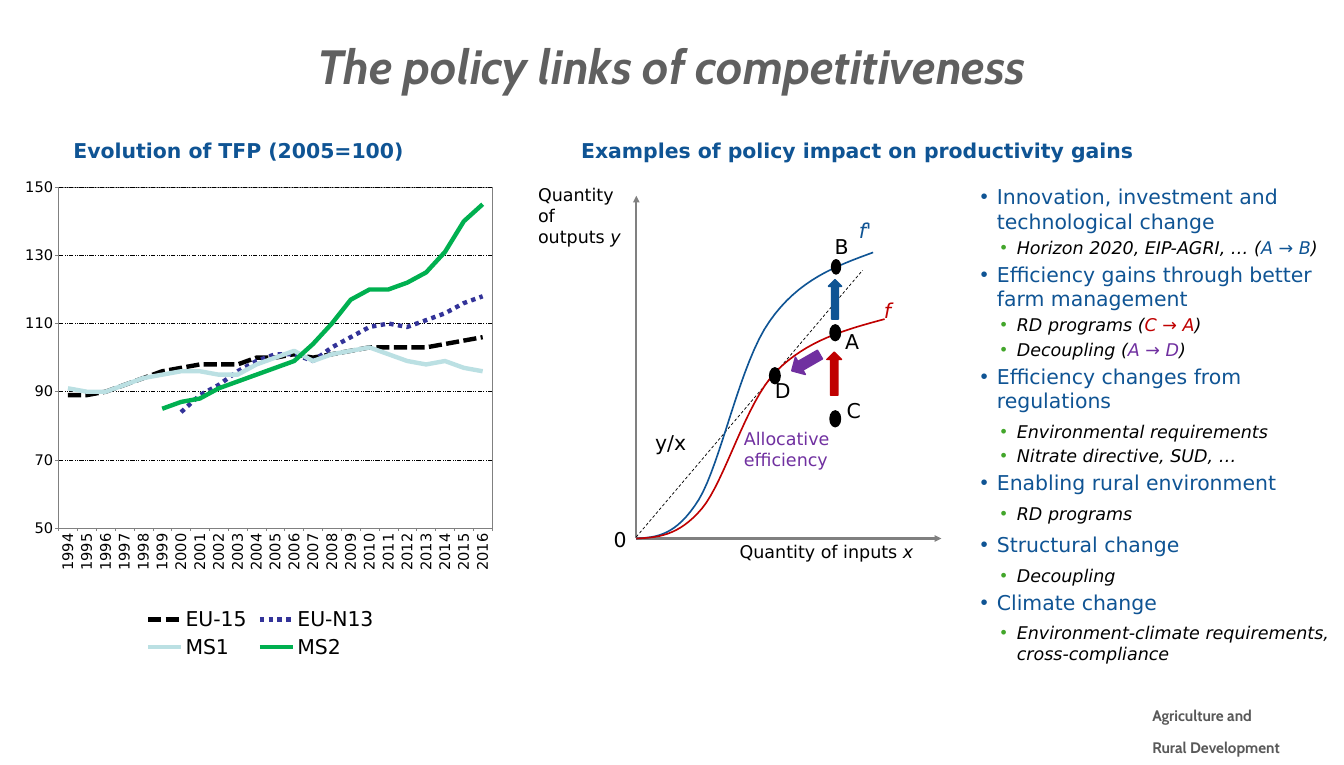
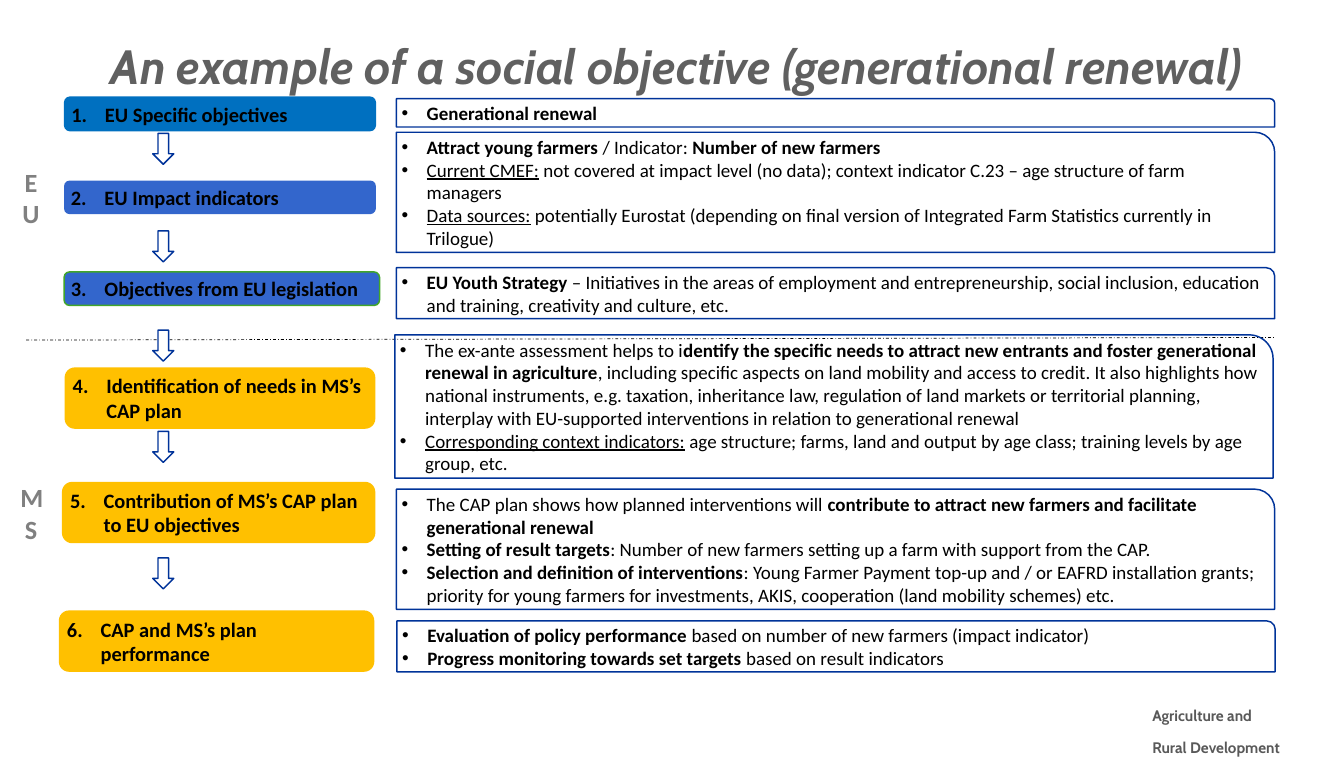
"""Builds two slides on policy links of competitiveness and generational renewal."""
from lxml.etree import SubElement
from pptx import Presentation
from pptx.chart.data import CategoryChartData
from pptx.dml.color import RGBColor
from pptx.enum.chart import XL_CHART_TYPE, XL_LEGEND_POSITION, XL_TICK_MARK
from pptx.enum.dml import MSO_LINE
from pptx.enum.shapes import MSO_CONNECTOR, MSO_SHAPE
from pptx.enum.text import MSO_ANCHOR, MSO_AUTO_SIZE, PP_ALIGN
from pptx.oxml import parse_xml
from pptx.oxml.ns import nsdecls, qn
from pptx.util import Inches, Pt

BLACK = RGBColor(0x00, 0x00, 0x00)
WHITE = RGBColor(0xFF, 0xFF, 0xFF)
GRAY = RGBColor(0x80, 0x80, 0x80)
SLATE = RGBColor(0x60, 0x60, 0x60)
STONE = RGBColor(0x59, 0x59, 0x59)
BLUE = RGBColor(0x0F, 0x54, 0x94)
NAVY = RGBColor(0x00, 0x33, 0x99)
SKY = RGBColor(0x00, 0x70, 0xC0)
ROYAL = RGBColor(0x33, 0x66, 0xCC)
INDIGO = RGBColor(0x33, 0x33, 0x99)
PALE = RGBColor(0xBB, 0xE0, 0xE3)
GREEN = RGBColor(0x00, 0xB0, 0x50)
LEAF = RGBColor(0x42, 0xA6, 0x2A)
RED = RGBColor(0xC0, 0x00, 0x00)
PURPLE = RGBColor(0x70, 0x30, 0xA0)
GOLD = RGBColor(0xFF, 0xC0, 0x00)
SANS, BODY, HEAD = "DejaVu Sans", "Calibri", "Cabin"

deck = Presentation()
deck.slide_width, deck.slide_height = Inches(25.59), Inches(14.57)
CELL = deck.slide_width / 256


def box(slide, kind, x, y, w, h, fill=None, edge=None):
    spot = [int(CELL * n) for n in (x, y, w, h)]
    if kind is None:
        shape = slide.shapes.add_textbox(*spot)
    else:
        shape = slide.shapes.add_shape(kind, *spot)
        shape.shadow.inherit = False
        for part, tone in ((shape.fill, fill), (shape.line.fill, edge)):
            if tone is None:
                part.background()
            else:
                part.solid()
                part.fore_color.rgb = tone
        if edge is not None:
            shape.line.width = Pt(2)
    shape.text_frame.word_wrap = True
    return shape


def write(par, parts, size, color, name=SANS, mark="", left=0, hang=0, tint=None):
    par.alignment = PP_ALIGN.LEFT
    if mark:
        props = par._p.get_or_add_pPr()
        props.set("marL", str(int(CELL * left)))
        props.set("indent", str(-int(CELL * hang)))
        tone = SubElement(SubElement(props, qn("a:buClr")), qn("a:srgbClr"))
        tone.set("val", str(tint or color))
        if mark.isdigit():
            bullet = SubElement(props, qn("a:buAutoNum"))
            bullet.set("type", "arabicPeriod")
            bullet.set("startAt", mark)
        else:
            SubElement(props, qn("a:buFont")).set("typeface", "Arial")
            SubElement(props, qn("a:buChar")).set("char", mark)
    font = par.font
    font.size, font.name, font.color.rgb = Pt(size), name, color
    for part in [parts] if isinstance(parts, str) else parts:
        text, look = (part, None) if isinstance(part, str) else part
        run = par.add_run()
        run.text = text
        if look == "b":
            run.font.bold = True
        elif look == "u":
            run.font.underline = True
        elif look == "i":
            run.font.italic = True
        elif look:
            run.font.color.rgb = look


slides = []
for text in ("The policy links of competitiveness ",
             "An example of a social objective (generational renewal)"):
    slide = deck.slides.add_slide(deck.slide_layouts[5])
    slides.append(slide)
    title = slide.shapes.title
    title.left, title.top, title.width, title.height = [
        int(CELL * n) for n in (6.4, 6.5, 245, 13.3)]
    frame = title.text_frame
    frame.auto_size, frame.word_wrap = MSO_AUTO_SIZE.NONE, True
    frame.vertical_anchor = MSO_ANCHOR.MIDDLE
    frame.margin_left = frame.margin_right = int(CELL * 2.6)
    frame.margin_top = frame.margin_bottom = int(CELL * 1.3)
    par = frame.paragraphs[0]
    write(par, text, 66, SLATE, HEAD)
    par.alignment, par.line_spacing = PP_ALIGN.CENTER, 0.9
    par.font.bold = par.font.italic = True

    frame = box(slide, None, 218.5, 133.5, 31.5, 9.1).text_frame
    for par, text in ((frame.paragraphs[0], "Agriculture and"),
                      (frame.add_paragraph(), "Rural Development")):
        write(par, text, 36, STONE, HEAD)
        par.font.bold = True
        par.runs[0]._r.get_or_add_rPr().set("baseline", "30000")
links, renew = slides

for slide, x1, y1, x2, y2, tone, width, dash in (
        (links, 121.2, 102.6, 121.2, 37.3, GRAY, 3, None),
        (links, 121.2, 102.6, 179.3, 102.6, GRAY, 3, None),
        (links, 121.2, 102.3, 164.3, 51.5, BLACK, 1, MSO_LINE.DASH),
        (renew, 5, 64.8, 242.8, 64.3, BLACK, 1, MSO_LINE.DASH_DOT)):
    wire = slide.shapes.add_connector(
        MSO_CONNECTOR.STRAIGHT, *[int(CELL * n) for n in (x1, y1, x2, y2)])
    wire.line.color.rgb, wire.line.width = tone, Pt(width)
    if dash:
        wire.line.dash_style = dash
    else:
        SubElement(wire.line._get_or_add_ln(), qn("a:tailEnd")).set("type", "triangle")
    SubElement(wire._element.spPr, qn("a:effectLst"))

for x, w, text in ((13, 85.4, "Evolution of TFP (2005=100)"),
                   (109.7, 134, "Examples of policy impact on productivity gains")):
    write(box(links, None, x, 25.9, w, 5.7).text_frame.paragraphs[0], [(text, "b")], 28, BLUE)

rows = (
    ("EU-15", BLACK, MSO_LINE.SQUARE_DOT, 0,
     (89, 89, 90, 92, 94, 96, 97, 98, 98, 98, 100, 100, 101, 100, 101, 102,
      103, 103, 103, 103, 104, 105, 106)),
    ("EU-N13", INDIGO, MSO_LINE.ROUND_DOT, 6,
     (84, 89, 92, 96, 99, 101, 101, 99, 103, 106, 109, 110, 109, 111, 113, 116, 118)),
    ("MS1", PALE, MSO_LINE.SOLID, 0,
     (91, 90, 90, 92, 94, 95, 96, 96, 95, 95, 98, 100, 102, 99, 101, 102, 103,
      101, 99, 98, 99, 97, 96)),
    ("MS2", GREEN, MSO_LINE.SOLID, 5,
     (85, 87, 88, 91, 93, 95, 97, 99, 104, 110, 117, 120, 120, 122, 125, 131, 140, 145)))
data = CategoryChartData()
data.categories = [str(year) for year in range(1994, 2017)]
for name, tone, dash, skip, vals in rows:
    data.add_series(name, [None] * skip + list(vals))
chart = links.shapes.add_chart(
    XL_CHART_TYPE.LINE, *[int(CELL * n) for n in (2.8, 30.9, 92.8, 95.5)], data).chart
chart.has_title = False
chart.font.size, chart.font.name, chart.font.color.rgb = Pt(20), SANS, BLACK
chart.plots[0].vary_by_categories = False
for line, (name, tone, dash, skip, vals) in zip(chart.plots[0].series, rows):
    line.smooth = False
    pen = line.format.line
    pen.color.rgb, pen.width, pen.dash_style = tone, Pt(6), dash
years, scale = chart.category_axis, chart.value_axis
for axis in (years, scale):
    axis.major_tick_mark = XL_TICK_MARK.OUTSIDE
    axis.format.line.color.rgb = GRAY
    axis.tick_labels.font.size = Pt(20)
years._element.txPr.bodyPr.set("rot", "-5400000")
scale.minimum_scale, scale.maximum_scale, scale.major_unit = 50, 150, 20
scale.tick_labels.number_format = "0"
scale.tick_labels.number_format_is_linked = False
grid = scale.major_gridlines.format.line
grid.color.rgb, grid.width, grid.dash_style = BLACK, Pt(0.75), MSO_LINE.DASH_DOT_DOT
chart.has_legend = True
legend = chart.legend
legend.position, legend.include_in_layout = XL_LEGEND_POSITION.BOTTOM, False
legend.font.size, legend.font.name, legend.font.color.rgb = Pt(28), SANS, BLACK
area = chart._chartSpace.chart.plotArea
for host, place, inner, share in (
        (area, 0, '<c:layoutTarget val="inner"/>', (0.09, 0.05, 0.89, 0.68)),
        (legend._element, 1, "", (0.26, 0.88, 0.49, 0.12))):
    for old in host.findall(qn("c:layout")):
        host.remove(old)
    sides = "".join(f'<c:{tag}Mode val="edge"/>' for tag in "xy")
    sides += "".join(f'<c:{tag} val="{n}"/>' for tag, n in zip("xywh", share))
    host.insert(place, parse_xml(
        f'<c:layout {nsdecls("c")}><c:manualLayout>{inner}{sides}</c:manualLayout></c:layout>'))
area.append(parse_xml(
    f'<c:spPr {nsdecls("c", "a")}><a:noFill/><a:ln w="12700"><a:solidFill>'
    f'<a:srgbClr val="{GRAY}"/></a:solidFill></a:ln></c:spPr>'))

for tone, knots in (
        (BLUE, ((121.2, 102.6), (125, 102.4), (128.8, 102.1), (133.1, 95.2), (137.3, 88.3),
                (141, 69), (146.6, 61.2), (152.1, 53.3), (159.2, 50.7), (166.3, 48.1))),
        (RED, ((121.2, 102.6), (125.2, 102.4), (129.2, 102.2), (133.7, 96.9), (138.1, 91.6),
               (142, 76.8), (147.8, 70.8), (153.7, 64.8), (161.1, 62.8), (168.5, 60.8)))):
    dots = []
    for k in range(0, 9, 3):
        for t in [n / 16 for n in range(1, 17)]:
            mix = ((1 - t) ** 3, 3 * t * (1 - t) ** 2, 3 * t * t * (1 - t), t ** 3)
            dots.append([int(CELL * sum(m * p[d] for m, p in zip(mix, knots[k:k + 4])))
                         for d in (0, 1)])
    path = links.shapes.build_freeform(*[int(CELL * n) for n in knots[0]])
    path.add_line_segments(dots, close=False)
    curve = path.convert_to_shape()
    curve.shadow.inherit = False
    curve.fill.background()
    curve.line.color.rgb, curve.line.width = tone, Pt(2.25)

for x, y, w, h in ((146.6, 70.1, 2, 3), (158.1, 78.3, 2, 3),
                   (158.1, 61.9, 2, 3), (158.4, 49.5, 1.7, 2.7)):
    box(links, MSO_SHAPE.OVAL, x, y, w, h, BLACK, BLACK)
for x, y, w, h, tone, turn in ((157.8, 53.3, 2.5, 7.5, BLUE, 0),
                               (157.5, 67.1, 2.8, 8.2, RED, 0),
                               (151.6, 66, 3.8, 6.2, PURPLE, 240)):
    box(links, MSO_SHAPE.UP_ARROW, x, y, w, h, tone, tone).rotation = turn
for x, y, w, size, tone, parts in (
        (160.3, 75.4, 7.6, 28, BLACK, "C"), (160, 62.3, 7.6, 28, BLACK, "A"),
        (146.6, 71.6, 7.6, 28, BLACK, "D"), (158, 44.1, 6.4, 28, BLACK, "B"),
        (123.8, 81.5, 12.4, 28, BLACK, "y/x"), (115.9, 100, 7.6, 28, BLACK, "0"),
        (167.4, 56.3, 7.6, 28, RED, [("f", "i")]),
        (162.6, 41, 9.6, 28, BLUE, [("f'", "i")]),
        (101.5, 34.6, 18.1, 24, BLACK, ["Quantity of outputs ", ("y", "i")]),
        (139.9, 102.6, 45.9, 24, BLACK, ["Quantity of inputs ", ("x", "i")]),
        (140.7, 81.1, 24.8, 24, PURPLE, "Allocative efficiency")):
    write(box(links, None, x, y, w, 10.8).text_frame.paragraphs[0], parts, size, tone)

frame = box(links, None, 185.8, 34.6, 72.1, 100.8).text_frame
for n, (level, after, parts) in enumerate((
        (0, 0, "Innovation, investment and technological change"),
        (1, 0, ["Horizon 2020, EIP-AGRI, … (", ("A → B", BLUE), ")"]),
        (0, 0, "Efficiency gains through better farm management"),
        (1, 0, ["RD programs (", ("C → A", RED), ")"]),
        (1, 0, ["Decoupling (", ("A → D", PURPLE), ")"]),
        (0, 6, "Efficiency changes from regulations"),
        (1, 0, "Environmental requirements"),
        (1, 0, "Nitrate directive, SUD, …"),
        (0, 6, "Enabling rural environment"),
        (1, 6, "RD programs"),
        (0, 6, "Structural change"),
        (1, 0, "Decoupling"),
        (0, 6, "Climate change"),
        (1, 0, "Environment-climate requirements, cross-compliance"))):
    par = frame.add_paragraph() if n else frame.paragraphs[0]
    size, tone, tint, left = ((28, BLUE, BLUE, 3.1), (24, BLACK, LEAF, 6.9))[level]
    write(par, parts, size, tone, SANS, "•", left, 3.1, tint)
    par.level, par.font.italic = level, bool(level)
    par.space_before, par.space_after = Pt(size * 0.2 if n else 0), Pt(after)

for y in (25.4, 44, 62.9, 82.2, 106.3):
    box(renew, MSO_SHAPE.DOWN_ARROW, 29.1, y, 4, 5.9, WHITE, NAVY)
for n, (x, y, w, h, fill, edge, text) in enumerate((
        (12.3, 18.5, 59.2, 6.4, SKY, SKY, "EU Specific objectives"),
        (12.2, 34.4, 59.4, 6.4, ROYAL, None, "EU Impact indicators"),
        (12.2, 51.8, 60.1, 6.4, ROYAL, LEAF, "Objectives from EU legislation"),
        (12.3, 70, 59.2, 11.7, GOLD, None, "Identification of needs in MS’s CAP plan"),
        (11.8, 91.8, 59.7, 11.7, GOLD, None, "Contribution of MS’s CAP plan to EU objectives"),
        (11.2, 116.3, 60.1, 11.7, GOLD, None, "CAP and MS’s plan performance")), 1):
    step = box(renew, MSO_SHAPE.ROUNDED_RECTANGLE, x, y, w, h, fill, edge)
    write(step.text_frame.paragraphs[0], [(text, "b")], 28, BLACK, BODY, str(n), 6.4, 6.4)

for x, y, h, points in (
        (75.5, 18.8, 5.4, [[("Generational renewal", "b")]]),
        (75.5, 25.2, 22.9, [
            [("Attract young farmers ", "b"), "/ Indicator: ", ("Number of new farmers", "b")],
            [("Current CMEF:", "u"), " not covered at impact level (no data); context indicator "
             "C.23 – age structure of farm managers"],
            [("Data sources:", "u"), " potentially Eurostat (depending on final version of "
             "Integrated Farm Statistics currently in Trilogue)"]]),
        (75.5, 51, 9.7, [
            [("EU Youth Strategy ", "b"), "– Initiatives in the areas of employment and "
             "entrepreneurship, social inclusion, education and training, creativity and "
             "culture, etc."]]),
        (75.2, 63.8, 27.3, [
            ["The ex-ante assessment helps to i", ("dentify the specific needs to attract new "
             "entrants and foster generational renewal in agriculture", "b"),
             ", including specific aspects on land mobility and access to credit. It also "
             "highlights how national instruments, e.g. taxation, inheritance law, regulation of "
             "land markets or territorial planning, interplay with EU-supported interventions in "
             "relation to generational renewal"],
            [("Corresponding context indicators:", "u"), " age structure; farms, land and output "
             "by age class; training levels by age group, etc."]]),
        (75.5, 93.2, 22.9, [
            ["The CAP plan shows how planned interventions will ",
             ("contribute to attract new farmers and facilitate generational renewal", "b")],
            [("Setting of result targets", "b"),
             ": Number of new farmers setting up a farm with support from the CAP."],
            [("Selection and definition of interventions", "b"), ": Young Farmer Payment top-up "
             "and / or EAFRD installation grants; priority for young farmers for investments, "
             "AKIS, cooperation (land mobility schemes) etc."]]),
        (75.6, 118.3, 9.7, [
            [("Evaluation of policy performance ", "b"),
             "based on number of new farmers (impact indicator)"],
            [("Progress monitoring towards set targets ", "b"), "based on result indicators"]])):
    frame = box(renew, MSO_SHAPE.ROUND_1_RECTANGLE, x, y, 167.3, h, None, NAVY).text_frame
    for n, parts in enumerate(points):
        par = frame.add_paragraph() if n else frame.paragraphs[0]
        write(par, parts, 26, BLACK, BODY, "•", 4.8, 4.8)

for y, text in ((30.3, "EU"), (90.4, "MS")):
    frame = box(renew, None, 1.3, y, 9.2, 14.8).text_frame
    frame.margin_left = frame.margin_right = int(CELL * 2.6)
    frame.margin_top = int(CELL * 1.3)
    write(frame.paragraphs[0], [(text, "b")], 36, GRAY, BODY)
    frame.paragraphs[0].alignment = PP_ALIGN.CENTER

deck.save("out.pptx")
